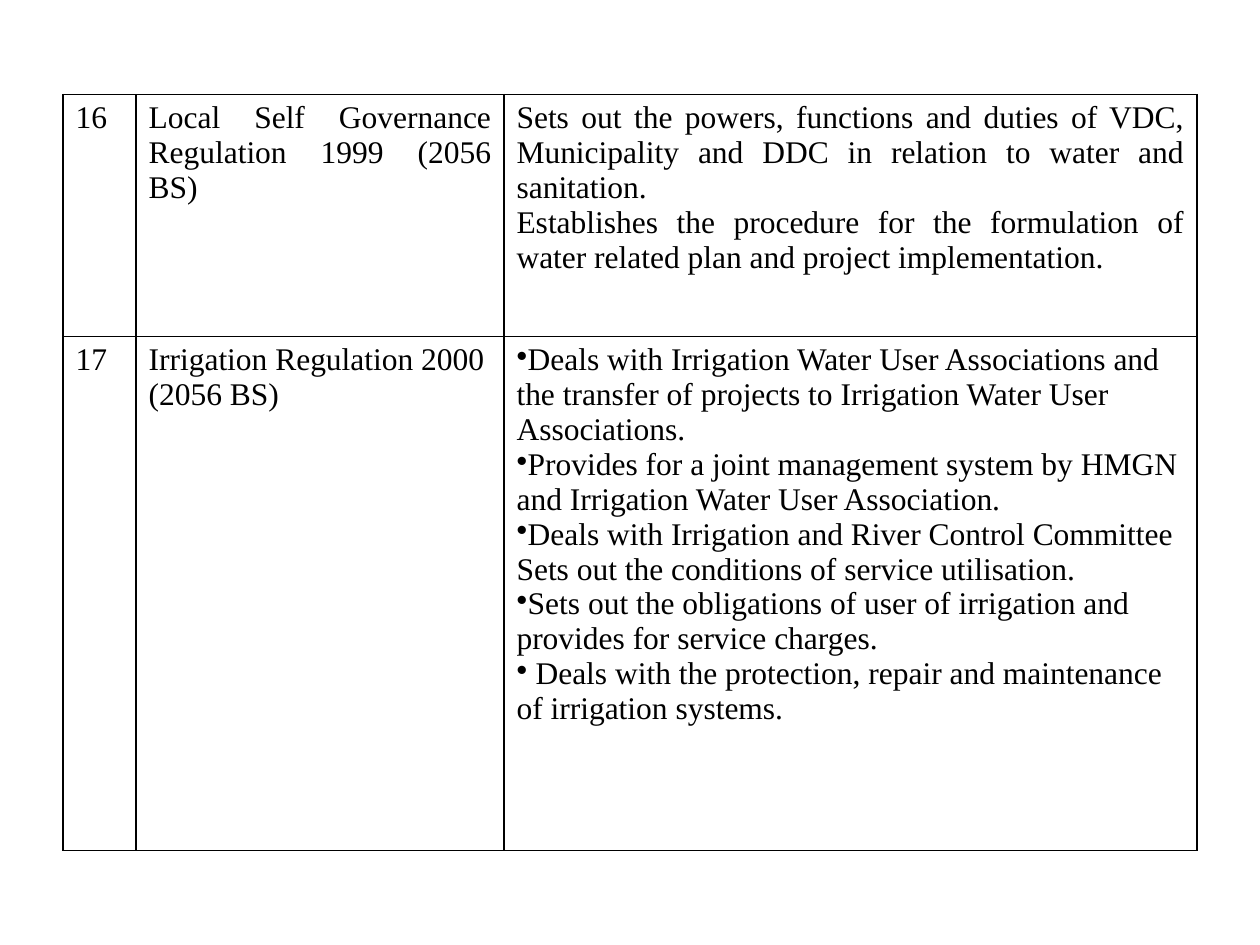
from dataclasses import dataclass

from lxml.etree import SubElement
from pptx import Presentation
from pptx.dml.color import RGBColor
from pptx.enum.text import PP_ALIGN
from pptx.oxml.ns import qn
from pptx.table import _Cell
from pptx.util import Inches, Pt

FONT_NAME = "Times New Roman"
FONT_SIZE = Pt(18)
BLACK = "000000"
COLUMN_WIDTHS = (0.58, 2.92, 5.5)


@dataclass(frozen=True)
class Regulation:
    number: str
    title: str
    provisions: tuple[str, ...]
    height: float
    alignment: PP_ALIGN
    bulleted: bool


REGULATIONS = (
    Regulation(
        "16",
        "Local Self Governance Regulation 1999 (2056 BS)",
        (
            "Sets out the powers, functions and duties of VDC, Municipality and DDC "
            "in relation to water and sanitation.",
            "Establishes the procedure for the formulation of water related plan and "
            "project implementation.",
        ),
        1.92,
        PP_ALIGN.JUSTIFY,
        False,
    ),
    Regulation(
        "17",
        "Irrigation Regulation 2000 (2056 BS)",
        (
            "Deals with Irrigation Water User Associations and the transfer of projects "
            "to Irrigation Water User Associations.",
            "Provides for a joint management system by HMGN and Irrigation Water User "
            "Association.",
            "Deals with Irrigation and River Control Committee Sets out the conditions "
            "of service utilisation.",
            "Sets out the obligations of user of irrigation and provides for service "
            "charges.",
            " Deals with the protection, repair and maintenance of irrigation systems.",
        ),
        4.08,
        PP_ALIGN.LEFT,
        True,
    ),
)


def color(hex_value: str) -> RGBColor:
    return RGBColor.from_string(hex_value)


def add_borders(cell: _Cell) -> None:
    """Draw a thin black line on all four sides; call before setting the fill."""
    properties = cell._tc.get_or_add_tcPr()
    for side in ("a:lnL", "a:lnR", "a:lnT", "a:lnB"):
        line = SubElement(properties, qn(side), w=str(Pt(1)))
        fill = SubElement(line, qn("a:solidFill"))
        SubElement(fill, qn("a:srgbClr"), val=BLACK)


def write_cell(
    cell: _Cell, lines: tuple[str, ...], alignment: PP_ALIGN, bulleted: bool = False
) -> None:
    add_borders(cell)
    cell.fill.background()
    cell.text_frame.text = "\n".join(lines)
    for paragraph in cell.text_frame.paragraphs:
        paragraph.alignment = alignment
        if bulleted:
            properties = paragraph._p.get_or_add_pPr()
            properties.set("marL", "0")
            properties.set("indent", "0")
            SubElement(properties, qn("a:buChar"), char="•")
        for run in paragraph.runs:
            run.font.name = FONT_NAME
            run.font.size = FONT_SIZE
            run.font.bold = False
            run.font.color.rgb = color(BLACK)


def main() -> None:
    presentation = Presentation()
    presentation.slide_width = Inches(10)
    presentation.slide_height = Inches(7.5)
    slide = presentation.slides.add_slide(presentation.slide_layouts[6])

    table = slide.shapes.add_table(
        len(REGULATIONS), len(COLUMN_WIDTHS),
        Inches(0.5), Inches(0.75), Inches(9), Inches(6),
    ).table
    table.first_row = False
    table.horz_banding = False
    for column, width in zip(table.columns, COLUMN_WIDTHS):
        column.width = Inches(width)

    for row, regulation in zip(table.rows, REGULATIONS):
        row.height = Inches(regulation.height)
        number_cell, title_cell, provisions_cell = row.cells
        write_cell(number_cell, (regulation.number,), regulation.alignment)
        write_cell(title_cell, (regulation.title,), regulation.alignment)
        write_cell(
            provisions_cell, regulation.provisions, regulation.alignment, regulation.bulleted
        )

    presentation.save("out.pptx")


if __name__ == "__main__":
    main()
